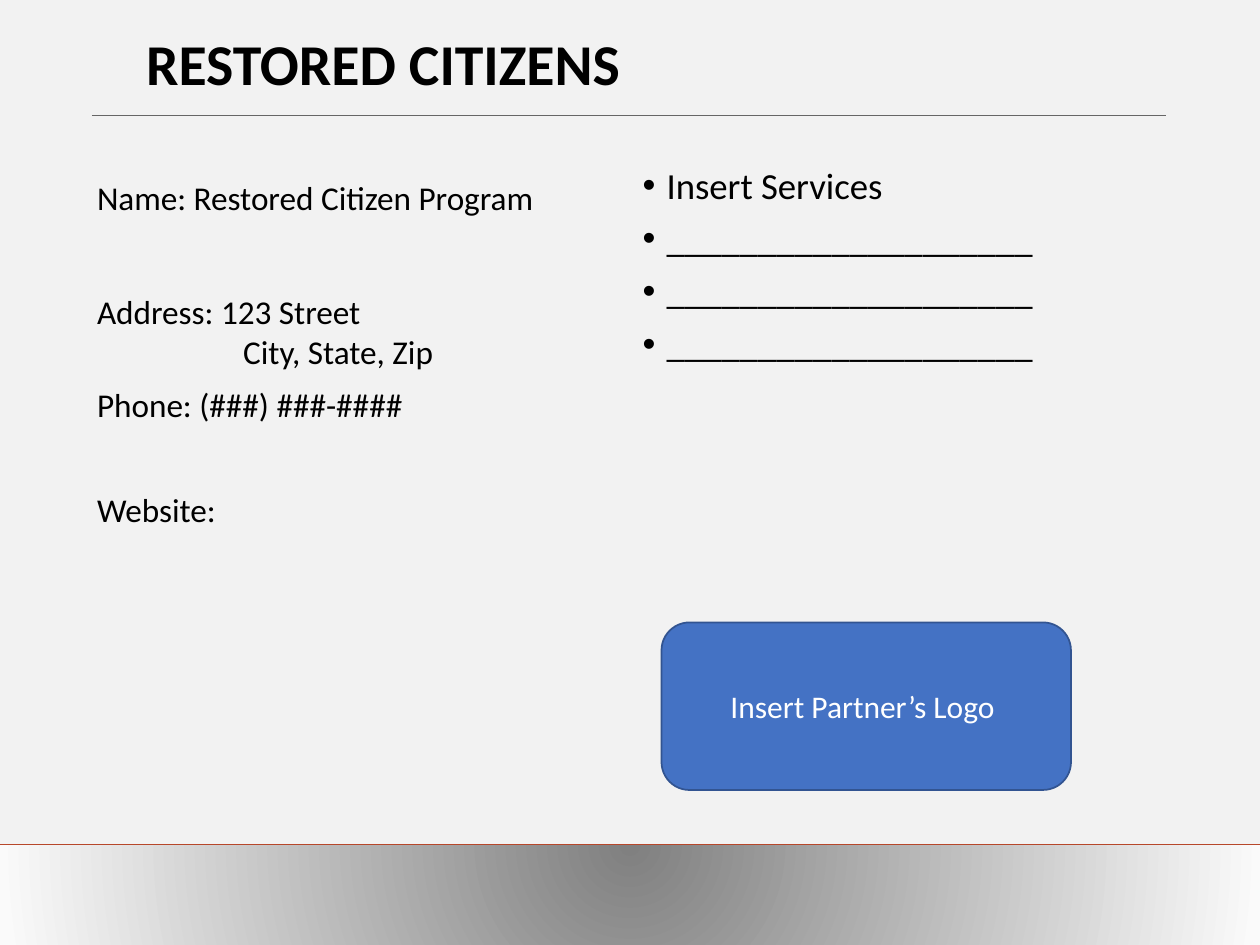
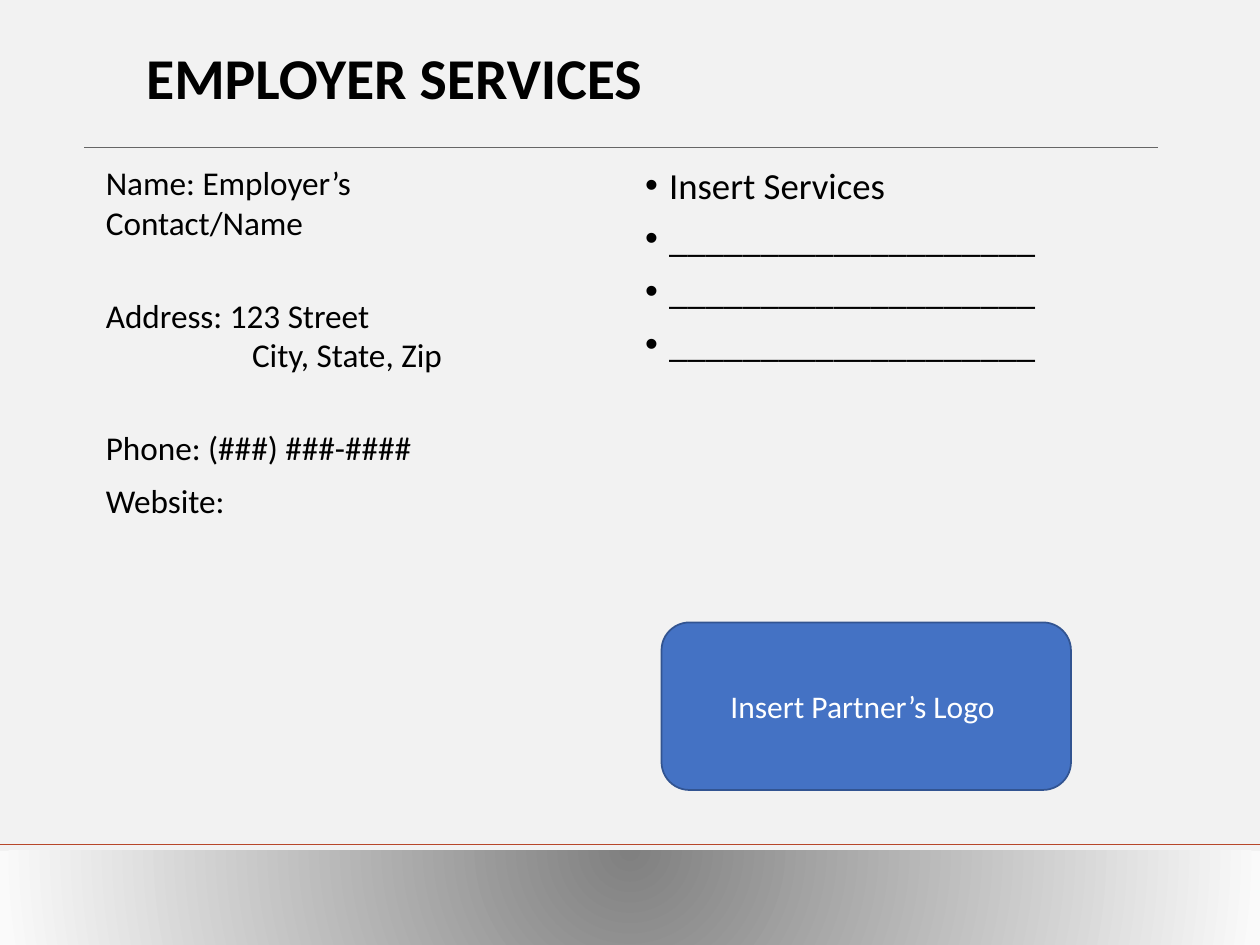
from pptx import Presentation
from pptx.dml.color import RGBColor
from pptx.enum.shapes import MSO_CONNECTOR as LINK, MSO_SHAPE as SHAPE
from pptx.enum.text import MSO_ANCHOR as ANCHOR, MSO_AUTO_SIZE as FIT, PP_ALIGN as ALIGN
from pptx.oxml import parse_xml
from pptx.oxml.ns import nsdecls, qn
from pptx.util import Inches, Pt

PAPER = RGBColor(0xF2, 0xF2, 0xF2)
INK = RGBColor(0, 0, 0)
WHITE = RGBColor(0xFF, 0xFF, 0xFF)
RUST = RGBColor(0xB7, 0x47, 0x2A)
GRAY = RGBColor(0x66, 0x66, 0x66)
DARK = RGBColor(0x80, 0x80, 0x80)
PALE = RGBColor(0xFA, 0xFA, 0xFA)
BLUE = RGBColor(0x44, 0x72, 0xC4)
NAVY = RGBColor(0x32, 0x54, 0x91)
FONT = "Calibri"
WIDE, HIGH = 10, 7.5
BLANK = "_" * 20


def write(para, text, size, color=INK, bold=False, align=ALIGN.LEFT,
          space=1.0, before=0, indent=0, bullet=None):
    """Fill a paragraph with formatted text."""
    para.text = text
    para.alignment = align
    para.line_spacing = space
    para.space_before = Pt(before)
    para.space_after = Pt(0)
    for run in para.runs:
        run.font.name = FONT
        run.font.size = Pt(size)
        run.font.bold = bold
        run.font.color.rgb = color
    props = para._p.get_or_add_pPr()
    props.set("marL", str(Inches(indent)))
    props.set("indent", str(Inches(-indent) if bullet else 0))
    mark = f'<a:buChar {nsdecls("a")} char="{bullet}"/>' if bullet else f'<a:buNone {nsdecls("a")}/>'
    props.append(parse_xml(mark))


def place(shape, left, top, width, height):
    """Set the box of a placeholder and return its text frame."""
    shape.left, shape.top = Inches(left), Inches(top)
    shape.width, shape.height = Inches(width), Inches(height)
    frame = shape.text_frame
    frame.word_wrap = True
    frame.auto_size = FIT.NONE
    return frame


def add_rule(slide, left, top, width, color):
    """Draw a thin level line."""
    rule = slide.shapes.add_connector(
        LINK.STRAIGHT, Inches(left), Inches(top), Inches(left + width), Inches(top))
    rule.line.color.rgb = color
    rule.line.width = Pt(0.5)
    rule._element.spPr.append(parse_xml(f'<a:effectLst {nsdecls("a")}/>'))


def add_title(slide, text, left, top, anchor):
    """Write the slide title."""
    frame = place(slide.shapes.title, left, top, 7.18, 1.14)
    frame.vertical_anchor = anchor
    write(frame.paragraphs[0], text, 33, bold=True, space=0.9)


def add_list(holder, left, top, rows, **style):
    """Fill a body placeholder with rows of text and their own format."""
    frame = place(holder, left, top, 3.98, 3.42)
    frame.vertical_anchor = ANCHOR.TOP
    for spot, (text, extra) in enumerate(rows):
        para = frame.add_paragraph() if spot else frame.paragraphs[0]
        write(para, text, **style, **extra)


def add_band(slide, top):
    """Draw the footer band with its round gradient."""
    band = slide.shapes.add_shape(
        SHAPE.RECTANGLE, 0, Inches(top), Inches(WIDE), Inches(HIGH - top))
    band.shadow.inherit = False
    band.line.fill.background()
    band.fill.gradient()
    for stop, color in zip(band.fill.gradient_stops, (DARK, PALE)):
        stop.color.rgb = color
    grad = band._element.spPr.find(qn("a:gradFill"))
    grad.replace(grad.find(qn("a:lin")), parse_xml(
        f'<a:path {nsdecls("a")} path="circle">'
        '<a:fillToRect l="43000" t="0" r="43000" b="100000"/></a:path>'))


def add_badge(slide, left, top, width, height):
    """Draw the box kept for the partner."""
    badge = slide.shapes.add_shape(
        SHAPE.ROUNDED_RECTANGLE, Inches(left), Inches(top), Inches(width), Inches(height))
    badge.shadow.inherit = False
    badge.fill.solid()
    badge.fill.fore_color.rgb = BLUE
    badge.line.color.rgb = NAVY
    badge.line.width = Pt(1)
    badge.text_frame.vertical_anchor = ANCHOR.MIDDLE
    write(badge.text_frame.paragraphs[0], "Insert Partner’s Logo ", 18, WHITE, align=ALIGN.CENTER)


def add_slide(deck, title, head, rule, name, gaps, contact, offer, band):
    """Build one contact slide."""
    slide = deck.slides.add_slide(deck.slide_layouts[3])
    add_rule(slide, 0, 6.7, WIDE, RUST)
    add_title(slide, title, 1.06, *head)
    texts = (name, "Address: 123 Street", "City, State, Zip", "Phone: (###) ###-####", "Website:")
    rows = [(text, {"before": gap}) for text, gap in zip(texts, gaps)]
    rows[2][1]["indent"] = 1.16
    add_list(slide.placeholders[1], *contact, rows, size=19)
    services = [(text, {}) for text in ["Insert Services"] + [BLANK] * 3]
    add_list(slide.placeholders[2], *offer, services, size=21,
             space=0.9, before=7.5, indent=0.19, bullet="•")
    add_band(slide, band)
    add_rule(slide, *rule, 8.52, GRAY)
    add_badge(slide, 5.25, 4.94, 3.25, 1.33)


def main():
    """Build and save the deck."""
    deck = Presentation()
    deck.slide_width, deck.slide_height = Inches(WIDE), Inches(HIGH)
    ground = deck.slide_master.background.fill
    ground.solid()
    ground.fore_color.rgb = PAPER
    add_slide(deck, "RESTORED CITIZENS", head=(0.23, ANCHOR.TOP), rule=(0.73, 0.92),
              name="Name: Restored Citizen Program", gaps=(7.5, 42, 0, 7.5, 37.5),
              contact=(0.67, 1.36), offer=(5, 1.28), band=6.71)
    add_slide(deck, "EMPLOYER SERVICES", head=(0.07, ANCHOR.MIDDLE), rule=(0.67, 1.17),
              name="Name: Employer’s\vContact/Name", gaps=(7.5, 30, 0, 30, 7.5),
              contact=(0.74, 1.24), offer=(5.02, 1.28), band=6.75)
    deck.save("out.pptx")


if __name__ == "__main__":
    main()
